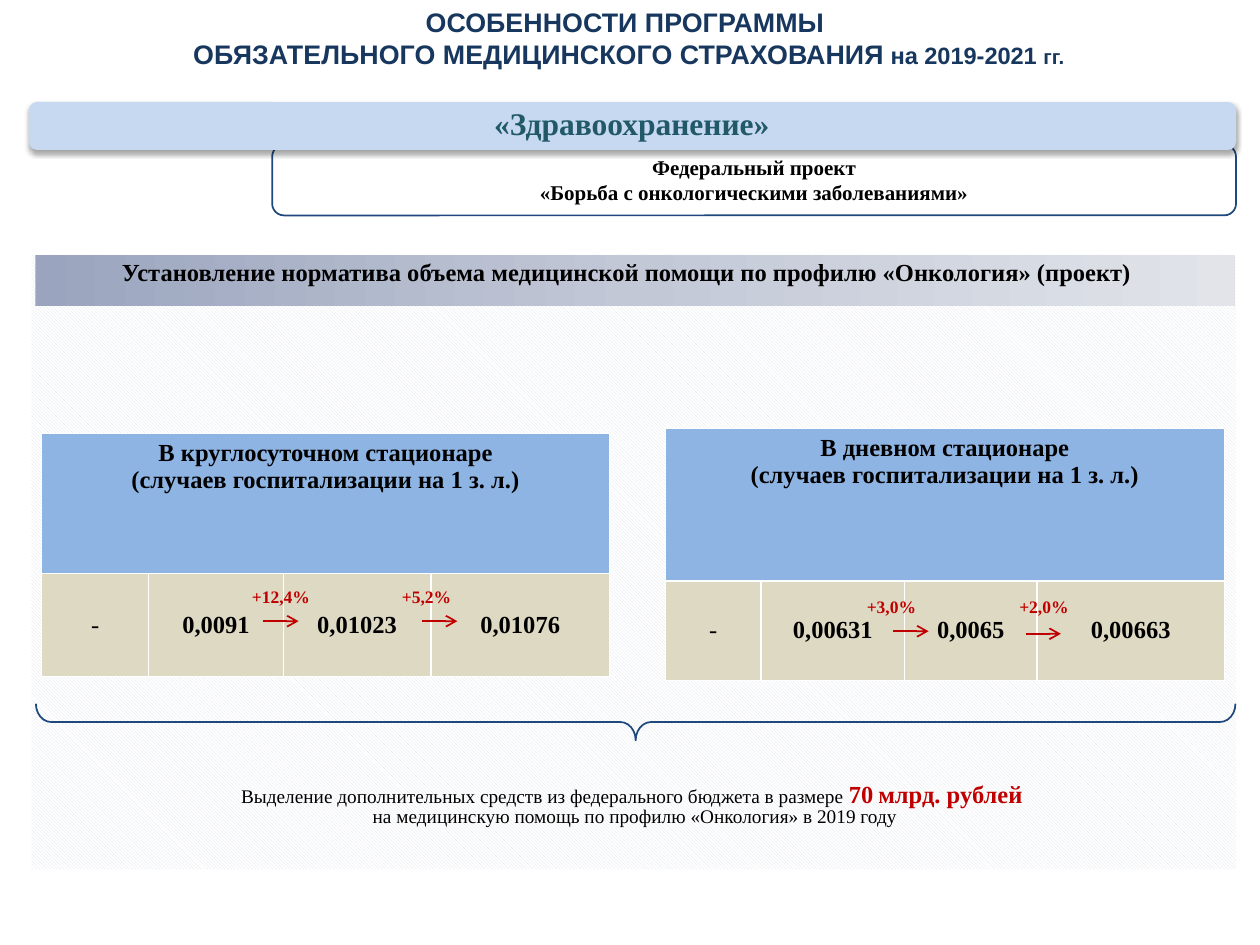
from copy import deepcopy

from pptx import Presentation
from pptx.dml.color import RGBColor
from pptx.enum.dml import MSO_PATTERN
from pptx.enum.shapes import MSO_CONNECTOR, MSO_SHAPE
from pptx.enum.text import MSO_ANCHOR, MSO_AUTO_SIZE, PP_ALIGN
from pptx.oxml import parse_xml
from pptx.oxml.ns import nsdecls, qn
from pptx.util import Pt

EMU_PER_PX = 9144
BLACK = RGBColor(0x00, 0x00, 0x00)
WHITE = RGBColor(0xFF, 0xFF, 0xFF)
RED = RGBColor(0xC0, 0x00, 0x00)
NAVY = RGBColor(0x1F, 0x49, 0x7D)
TITLE_BLUE = RGBColor(0x17, 0x37, 0x5E)
TEAL = RGBColor(0x21, 0x59, 0x68)
PALE_BLUE = RGBColor(0xC6, 0xD9, 0xF1)
TABLE_BLUE = RGBColor(0x8E, 0xB4, 0xE3)
SAND = RGBColor(0xDD, 0xD9, 0xC3)
HATCH = RGBColor(0xDC, 0xE1, 0xE8)
BANNER_STOPS = [
    (0, RGBColor(0x9A, 0xA4, 0xBE)),
    (0.5, RGBColor(0xC2, 0xC8, 0xD6)),
    (1, RGBColor(0xE2, 0xE4, 0xEA)),
]
SERIF = "Times New Roman"
GROW = {"auto_size": MSO_AUTO_SIZE.SHAPE_TO_FIT_TEXT}
MIDDLE = {"vertical_anchor": MSO_ANCHOR.MIDDLE}


def px(value):
    return value * EMU_PER_PX


def apply(target, values):
    for name, value in values.items():
        setattr(target, name, value)


def style(size, color=BLACK, bold=True, font=SERIF):
    return {"size": Pt(size), "bold": bold, "name": font}, color


class SlideBuilder:
    def __init__(self, slide):
        self.slide = slide
        self.shapes = slide.shapes

    def fill_text(self, frame, paragraphs, frame_format, align=PP_ALIGN.CENTER, spacing=None):
        apply(frame, {"word_wrap": True, **frame_format})
        for index, runs in enumerate(paragraphs):
            paragraph = frame.add_paragraph() if index else frame.paragraphs[0]
            apply(paragraph, {"alignment": align, "line_spacing": spacing})
            for text, (font_format, color) in runs:
                for number, line in enumerate(text.split("\n")):
                    if number:
                        paragraph.add_line_break()
                    run = paragraph.add_run()
                    run.text = line
                    apply(run.font, font_format)
                    run.font.color.rgb = color

    def title(self, box, runs):
        heading = self.shapes.title
        apply(heading, dict(zip(("left", "top", "width", "height"), map(px, box))))
        self.fill_text(heading.text_frame, [runs], {**MIDDLE, "auto_size": MSO_AUTO_SIZE.NONE})

    def shape(self, kind, box, fill=None, line=None):
        shape = self.shapes.add_shape(kind, *map(px, box))
        shape.shadow.inherit = False
        if fill:
            shape.fill.solid()
            shape.fill.fore_color.rgb = fill
        else:
            shape.fill.background()
        if line:
            shape.line.color.rgb = line
            shape.line.width = Pt(1)
        else:
            shape.line.fill.background()
        return shape

    def hatched(self, box):
        fill = self.shape(MSO_SHAPE.RECTANGLE, box).fill
        fill.patterned()
        fill.pattern = MSO_PATTERN.DARK_DOWNWARD_DIAGONAL
        fill.fore_color.rgb = HATCH
        fill.back_color.rgb = WHITE

    def gradient(self, box, stops):
        banner = self.shape(MSO_SHAPE.RECTANGLE, box)
        banner.fill.gradient()
        banner.fill.gradient_angle = 0
        stop_list = banner.element.spPr.find(".//" + qn("a:gsLst"))
        stop_list.insert(1, deepcopy(stop_list[0]))
        for stop, (position, color) in zip(banner.fill.gradient_stops, stops):
            stop.position = position
            stop.color.rgb = color

    def raised(self, box, fill):
        plate = self.shape(MSO_SHAPE.ROUNDED_RECTANGLE, box, fill)
        plate.element.spPr.find(qn("a:effectLst")).append(parse_xml(
            f'<a:outerShdw {nsdecls("a")} blurRad="{Pt(3.1)}" dist="{Pt(1.8)}" dir="5400000">'
            '<a:srgbClr val="000000"><a:alpha val="35000"/></a:srgbClr></a:outerShdw>'))

    def brace(self, box):
        brace = self.shape(MSO_SHAPE.LEFT_BRACE, box, line=NAVY)
        brace.rotation = 270
        brace.adjustments[0] = 0.42
        brace.adjustments[1] = 0.5

    def text(self, box, paragraphs, frame_format, **options):
        label = self.shapes.add_textbox(*map(px, box))
        self.fill_text(label.text_frame, paragraphs, frame_format, **options)

    def arrow(self, left, top, length=28):
        arrow = self.shapes.add_connector(
            MSO_CONNECTOR.STRAIGHT, px(left), px(top), px(left + length), px(top))
        arrow.line.color.rgb = RED
        arrow.line.width = Pt(1)
        properties = arrow.element.spPr
        properties.find(qn("a:ln")).append(
            parse_xml(f'<a:tailEnd {nsdecls("a")} type="arrow"/>'))
        properties.append(parse_xml(f'<a:effectLst {nsdecls("a")}/>'))

    def table(self, left, top, columns, rows, heading, values):
        table = self.shapes.add_table(
            2, len(columns), px(left), px(top), px(sum(columns)), px(sum(rows))).table
        for column, width in zip(table.columns, columns):
            column.width = px(width)
        for row, height in zip(table.rows, rows):
            row.height = px(height)
        header = table.cell(0, 0)
        header.merge(table.cell(0, len(columns) - 1))
        self.cell(header, heading, TABLE_BLUE, MSO_ANCHOR.TOP)
        for index, value in enumerate(values):
            self.cell(table.cell(1, index), value, SAND, MSO_ANCHOR.MIDDLE, value != "-")

    def cell(self, cell, text, fill, anchor, bold=True):
        cell.fill.solid()
        cell.fill.fore_color.rgb = fill
        cell.vertical_anchor = anchor
        self.fill_text(cell.text_frame, [[(text, style(14, bold=bold))]], {})


def main():
    deck = Presentation()
    apply(deck, {"slide_width": px(1000), "slide_height": px(750)})
    page = SlideBuilder(deck.slides.add_slide(deck.slide_layouts[5]))

    page.title((-2, 2, 1002, 56), [
        ("ОСОБЕННОСТИ ПРОГРАММЫ \nОБЯЗАТЕЛЬНОГО МЕДИЦИНСКОГО СТРАХОВАНИЯ",
         style(15.3, TITLE_BLUE, font="Arial")),
        (" на 2019-2021 ", style(13.5, TITLE_BLUE, font="Arial")),
        ("гг.", style(11.7, TITLE_BLUE, font="Arial")),
    ])
    page.hatched((25, 202, 956, 488))

    unit = "(случаев госпитализации на 1 з. л.)"
    page.table(528, 340, (76, 114, 105, 149), (121, 79),
               f"В дневном стационаре\n{unit}", ("-", "0,00631", "0,0065", "0,00663"))
    page.table(33, 344, (85, 107, 117, 142), (111, 82),
               f"В круглосуточном стационаре\n{unit}", ("-", "0,0091", "0,01023", "0,01076"))

    project = page.shape(MSO_SHAPE.ROUNDED_RECTANGLE, (216, 115, 765, 56), line=NAVY)
    page.fill_text(project.text_frame, [[
        ("Федеральный проект\n«Борьба с онкологическими заболеваниями»", style(12))]],
        {**GROW, "vertical_anchor": MSO_ANCHOR.TOP})

    funding = page.shape(MSO_SHAPE.ROUNDED_RECTANGLE, (51, 619, 906, 45))
    page.fill_text(funding.text_frame, [
        [("Выделение дополнительных средств из федерального бюджета в размере ",
          style(11, bold=False)),
         ("70", style(14, RED)), (" ", style(11, RED)), ("млрд. рублей ", style(14, RED))],
        [("на медицинскую помощь по профилю «Онкология» в 2019 году", style(11, bold=False))],
    ], {**GROW, **MIDDLE}, spacing=Pt(11))

    growth_margins = {"margin_left": px(7), "margin_right": px(7),
                      "margin_top": px(4), "margin_bottom": px(4)}
    for growth, left, top, arrow_left, arrow_top in (
            ("+12,4%", 193, 461, 209, 493), ("+5,2%", 312, 461, 335, 493),
            ("+3,0%", 681, 469, 709, 501), ("+2,0%", 802, 469, 814, 503)):
        page.text((left, top, 70, 24), [[(growth, style(10, RED))]],
                  {**GROW, **growth_margins}, align=PP_ALIGN.LEFT)
        page.arrow(arrow_left, arrow_top)

    page.gradient((28, 202, 952, 41), BANNER_STOPS)
    page.text((23, 199, 949, 34), [[
        ("Установление норматива объема медицинской помощи по профилю «Онкология» (проект)",
         style(14))]], {**GROW, **MIDDLE})
    page.brace((490, 97, 29, 952))
    page.raised((23, 81, 958, 38), PALE_BLUE)
    page.text((31, 82, 941, 35), [[("«Здравоохранение»", style(18, TEAL))]],
              {**MIDDLE, "margin_top": 0, "margin_bottom": 0}, spacing=0.9)
    deck.save("out.pptx")


if __name__ == "__main__":
    main()
